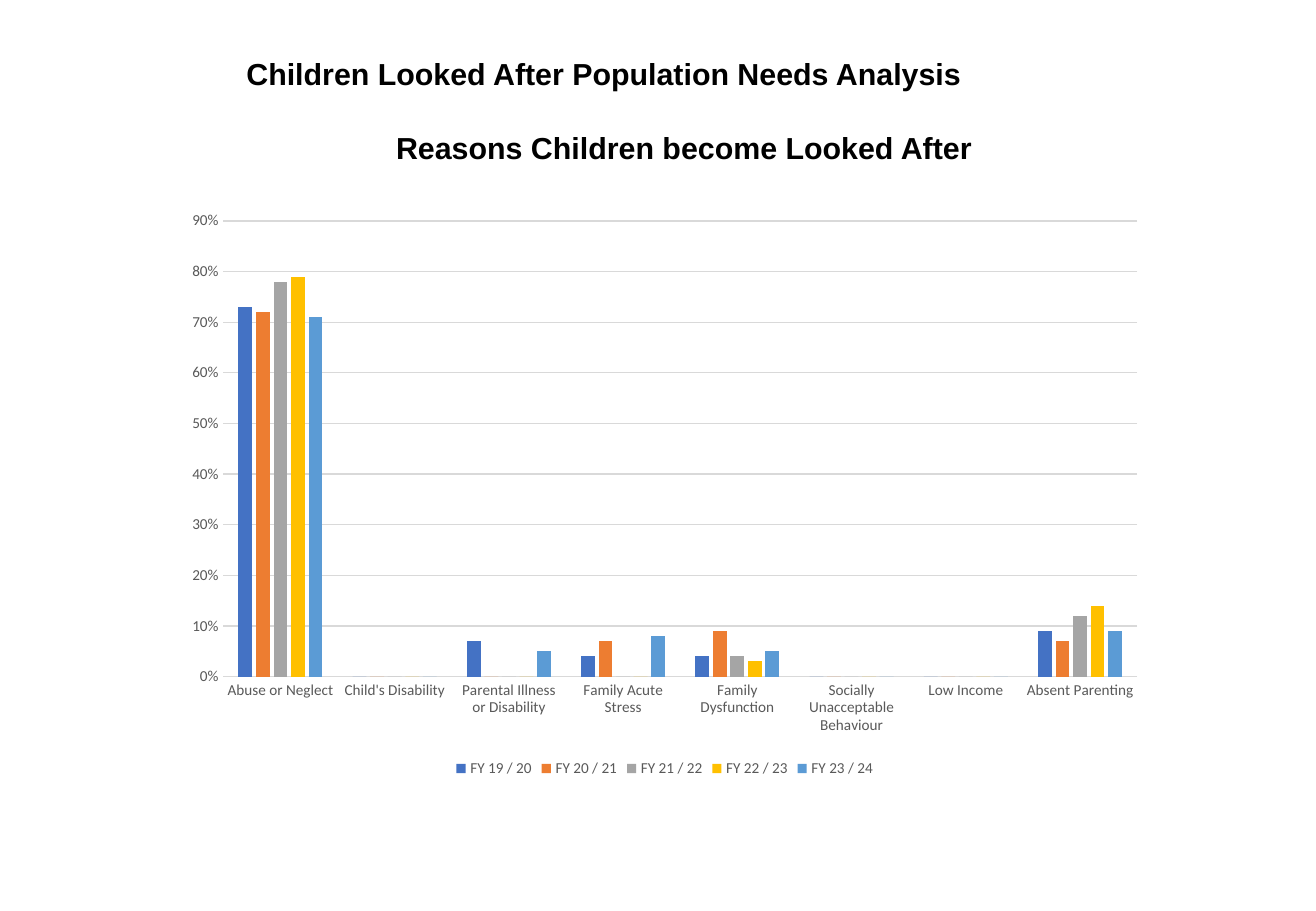
from dataclasses import dataclass

from pptx import Presentation
from pptx import util as u
from pptx.chart.data import CategoryChartData
from pptx.dml.color import RGBColor
from pptx.enum import chart as ch, text


@dataclass(frozen=True)
class Theme:
    head: str = "Arial"
    body: str = "Calibri"
    black: str = "000000"
    grey: str = "595959"
    rule: str = "D9D9D9"
    bars: tuple = ("4472C4", "ED7D31", "A5A5A5", "FFC000", "5B9BD5")
    title: int = 18
    chart: int = 10
    label: int = 9


THEME = Theme()

# Heading lines, each with its left indent in inches
HEADS = [
    ("Children Looked After Population Needs Analysis", 0.61),
    ("Reasons Children become Looked After", 1.93),
]
CAUSES = [
    "Abuse or Neglect", "Child's Disability", "Parental Illness or Disability",
    "Family Acute Stress", "Family Dysfunction",
    "Socially Unacceptable Behaviour", "Low Income", "Absent Parenting",
]
YEARS = {
    "FY 19 / 20": (0.73, 0, 0.07, 0.04, 0.04, 0, 0, 0.09),
    "FY 20 / 21": (0.72, 0, 0, 0.07, 0.09, 0, 0, 0.07),
    "FY 21 / 22": (0.78, 0, 0, 0, 0.04, 0, 0, 0.12),
    "FY 22 / 23": (0.79, 0, 0, 0, 0.03, 0, 0, 0.14),
    "FY 23 / 24": (0.71, 0, 0.05, 0.08, 0.05, 0, 0, 0.09),
}


def set_font(font, name, size, color, bold=False):
    font.name = name
    font.size = u.Pt(size)
    font.bold = bold
    font.color.rgb = RGBColor.from_string(color)


def set_line(line):
    line.width = u.Pt(0.75)
    line.color.rgb = RGBColor.from_string(THEME.rule)


def add_title(slide):
    title = slide.shapes.title
    title.left, title.top = u.Inches(0.19), u.Inches(0.4)
    title.width, title.height = u.Inches(8.95), u.Inches(1)
    frame = title.text_frame
    frame.word_wrap = True
    frame.auto_size = text.MSO_AUTO_SIZE.NONE
    frame.vertical_anchor = text.MSO_ANCHOR.TOP
    for i, (words, indent) in enumerate(HEADS):
        para = frame.add_paragraph() if i else frame.paragraphs[0]
        para.alignment = text.PP_ALIGN.CENTER
        para.line_spacing = 1.0
        para.space_before = u.Pt(22.5 if i else 0)
        props = para._p.get_or_add_pPr()
        props.set("marL", str(u.Inches(indent)))
        props.set("indent", "0")
        run = para.add_run()
        run.text = words
        set_font(run.font, THEME.head, THEME.title, THEME.black, True)


def style_axis(axis):
    axis.major_tick_mark = axis.minor_tick_mark = ch.XL_TICK_MARK.NONE
    set_font(axis.tick_labels.font, THEME.body, THEME.label, THEME.grey)


def add_bars(slide):
    data = CategoryChartData(number_format="0%")
    data.categories = CAUSES
    for year, shares in YEARS.items():
        data.add_series(year, shares)
    chart = slide.shapes.add_chart(
        ch.XL_CHART_TYPE.COLUMN_CLUSTERED, u.Inches(1.42), u.Inches(1.65),
        u.Inches(8.1), u.Inches(4.79), data).chart
    chart.has_title = False
    set_font(chart.font, THEME.body, THEME.chart, THEME.black)

    # Columns
    plot = chart.plots[0]
    plot.gap_width, plot.overlap = 219, -27
    plot.vary_by_categories = False
    for series, color in zip(plot.series, THEME.bars):
        series.format.fill.solid()
        series.format.fill.fore_color.rgb = RGBColor.from_string(color)

    # Axes
    style_axis(chart.category_axis)
    set_line(chart.category_axis.format.line)
    scale = chart.value_axis
    style_axis(scale)
    scale.minimum_scale, scale.maximum_scale, scale.major_unit = 0, 0.9, 0.1
    scale.tick_labels.number_format = "0%"
    scale.tick_labels.number_format_is_linked = False
    scale.format.line.fill.background()
    set_line(scale.major_gridlines.format.line)

    # Legend
    chart.has_legend = True
    chart.legend.position = ch.XL_LEGEND_POSITION.BOTTOM
    chart.legend.include_in_layout = False
    set_font(chart.legend.font, THEME.body, THEME.label, THEME.grey)


def main():
    deck = Presentation()
    deck.slide_width, deck.slide_height = u.Inches(10.83), u.Inches(7.5)
    slide = deck.slides.add_slide(deck.slide_layouts[5])
    add_title(slide)
    add_bars(slide)
    deck.save("out.pptx")


if __name__ == "__main__":
    main()
